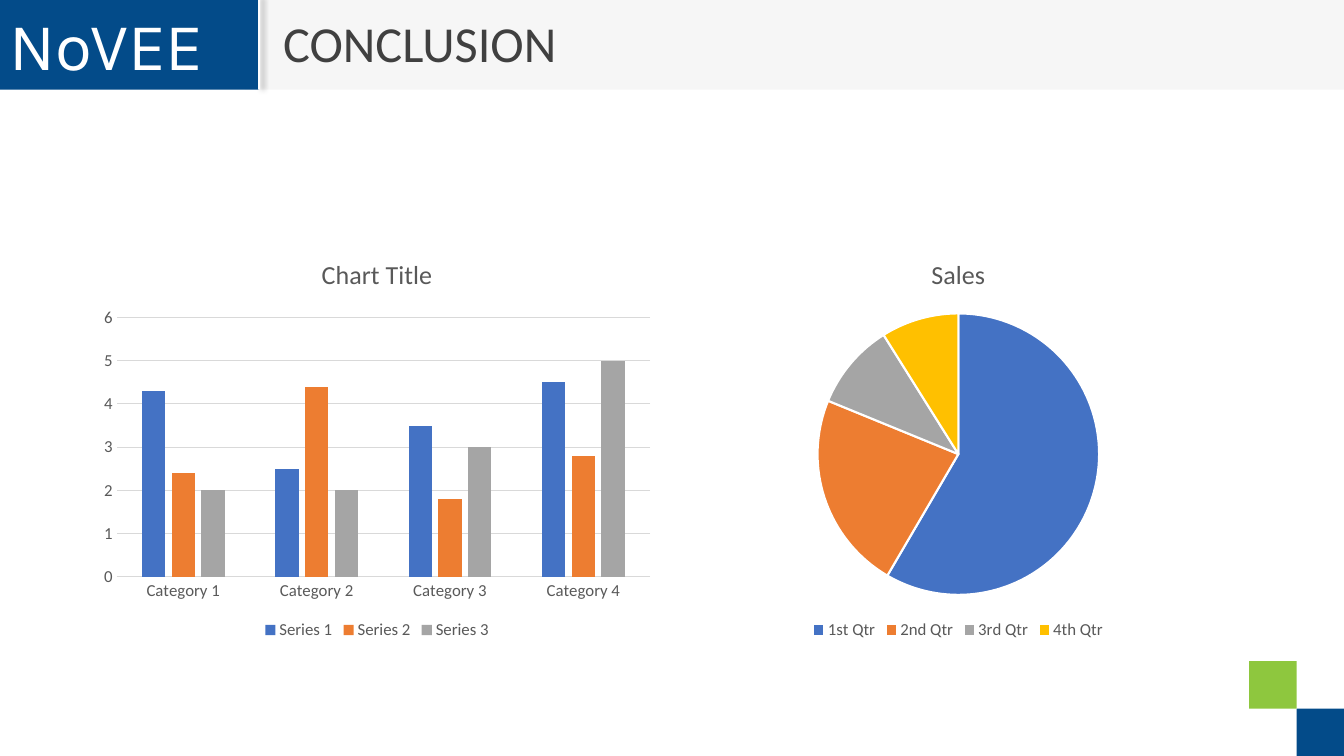
from lxml import etree
from pptx import Presentation
from pptx.chart.data import CategoryChartData
from pptx.dml.color import RGBColor
from pptx.enum.chart import XL_CHART_TYPE, XL_LEGEND_POSITION, XL_TICK_MARK
from pptx.enum.shapes import MSO_SHAPE
from pptx.enum.text import MSO_ANCHOR, PP_ALIGN
from pptx.oxml.ns import qn
from pptx.util import Inches, Pt

COLUMN, PIE = XL_CHART_TYPE.COLUMN_CLUSTERED, XL_CHART_TYPE.PIE
BOTTOM_LEGEND = XL_LEGEND_POSITION.BOTTOM
NO_TICK = XL_TICK_MARK.NONE
RECT = MSO_SHAPE.RECTANGLE
MIDDLE, BOTTOM = MSO_ANCHOR.MIDDLE, MSO_ANCHOR.BOTTOM
LEFT = PP_ALIGN.LEFT

COLORS = {
    "navy": "034B89", "green": "8EC73E", "band": "D5D5D6", "white": "FFFFFF",
    "title": "404040", "label": "595959", "grid": "D9D9D9", "black": "000000",
    "blue": "4472C4", "orange": "ED7D31", "gray": "A5A5A5", "gold": "FFC000",
}
PALETTE = ["blue", "orange", "gray", "gold"]
SLIDE_W, SLIDE_H = 13.33, 7.5
HEADER_H = 0.89
TILE = 0.47


def rgb(name):
    """Return the named colour."""
    return RGBColor.from_string(COLORS[name])


def style_font(font, size, color, name="Calibri"):
    """Set size, colour and typeface of a font."""
    font.size = Pt(size)
    font.name = name
    font.bold = False
    font.color.rgb = rgb(color)


def fill_solid(fill, color):
    """Fill with the named colour."""
    fill.solid()
    fill.fore_color.rgb = rgb(color)


def add_rect(slide, x, y, w, h, color, alpha=None):
    """Add a borderless rectangle, transparent if alpha is given in percent."""
    sp = slide.shapes.add_shape(RECT, Inches(x), Inches(y), Inches(w), Inches(h))
    sp.shadow.inherit = False
    sp.line.fill.background()
    fill_solid(sp.fill, color)
    if alpha is not None:
        clr = sp.fill._xPr.find(".//" + qn("a:srgbClr"))
        etree.SubElement(clr, qn("a:alpha"), val=str(alpha * 1000))
    return sp


def add_shadow(sp, blur, dist, alpha):
    """Cast a black shadow to the right, lengths in points."""
    effects = sp._element.spPr.find(qn("a:effectLst"))
    shadow = etree.SubElement(effects, qn("a:outerShdw"), blurRad=str(Pt(blur)),
                              dist=str(Pt(dist)), dir="0", algn="l", rotWithShape="0")
    clr = etree.SubElement(shadow, qn("a:srgbClr"), val=COLORS["black"])
    etree.SubElement(clr, qn("a:alpha"), val=str(alpha * 1000))


def write_text(sp, text, size, color, font="Calibri", anchor=MIDDLE, spacing=1.0, before=0):
    """Write one left-aligned line into a shape."""
    tf = sp.text_frame
    tf.word_wrap = True
    tf.vertical_anchor = anchor
    p = tf.paragraphs[0]
    p.alignment = LEFT
    p.line_spacing = spacing
    p.space_before = Pt(before)
    r = p.add_run()
    r.text = text
    style_font(r.font, size, color, font)


def add_chart(slide, kind, x, w, title, categories, series):
    """Add a titled chart with a legend below it."""
    data = CategoryChartData()
    data.categories = categories
    for name, values in series:
        data.add_series(name, values)
    chart = slide.shapes.add_chart(
        kind, Inches(x), Inches(2.36), Inches(w), Inches(4.03), data).chart
    style_font(chart.font, 10, "black")
    chart.has_title = True
    p = chart.chart_title.text_frame.paragraphs[0]
    r = p.add_run()
    r.text = title
    style_font(r.font, 18.6, "label")
    chart.chart_title.include_in_layout = False
    chart.has_legend = True
    chart.legend.position = BOTTOM_LEGEND
    chart.legend.include_in_layout = False
    style_font(chart.legend.font, 12, "label")
    return chart


def style_axis(axis):
    """Give an axis plain labels without ticks."""
    axis.major_tick_mark = axis.minor_tick_mark = NO_TICK
    style_font(axis.tick_labels.font, 12, "label")


def style_line(line, color, width):
    """Set colour and width of a line."""
    line.color.rgb = rgb(color)
    line.width = Pt(width)


def add_column_chart(slide):
    """Add the clustered columns."""
    chart = add_chart(
        slide, COLUMN, 0.92, 5.64, "Chart Title",
        [f"Category {i}" for i in range(1, 5)],
        [("Series 1", (4.3, 2.5, 3.5, 4.5)),
         ("Series 2", (2.4, 4.4, 1.8, 2.8)),
         ("Series 3", (2, 2, 3, 5))])
    plot = chart.plots[0]
    plot.gap_width, plot.overlap = 219, -27
    plot.vary_by_categories = False
    for series, color in zip(plot.series, PALETTE):
        fill_solid(series.format.fill, color)
    cat, val = chart.category_axis, chart.value_axis
    style_axis(cat)
    style_axis(val)
    style_line(cat.format.line, "grid", 0.75)
    val.format.line.fill.background()
    val.minimum_scale, val.maximum_scale, val.major_unit = 0, 6, 1
    val.has_major_gridlines = True
    style_line(val.major_gridlines.format.line, "grid", 0.75)


def add_pie_chart(slide):
    """Add the pie of quarterly sales."""
    chart = add_chart(
        slide, PIE, 6.67, 5.67, "Sales",
        ["1st Qtr", "2nd Qtr", "3rd Qtr", "4th Qtr"],
        [("Sales", (59, 23, 10, 9))])
    plot = chart.plots[0]
    plot.vary_by_categories = True
    for i, color in enumerate(PALETTE):
        fmt = plot.series[0].points[i].format
        fill_solid(fmt.fill, color)
        style_line(fmt.line, "white", 1.5)


def add_header(slide):
    """Add the header band, name block, divider and title."""
    add_rect(slide, 2.43, 0, SLIDE_W - 2.43, HEADER_H, "band", alpha=20)
    block = add_rect(slide, 0, -0.02, 2.57, 0.91, "navy")
    write_text(block, "NoVEE", 48, "white", font="Karla")
    divider = add_rect(slide, 2.56, -0.02, 0.02, 0.91, "white")
    add_shadow(divider, blur=4, dist=3, alpha=40)
    title = slide.shapes.add_textbox(Inches(2.71), Inches(0.13), Inches(10.32), Inches(0.64))
    write_text(title, "CONCLUSION", 36, "title", anchor=BOTTOM, spacing=0.8, before=10)


def main():
    """Build and save the slide."""
    prs = Presentation()
    prs.slide_width, prs.slide_height = Inches(SLIDE_W), Inches(SLIDE_H)
    slide = prs.slides.add_slide(prs.slide_layouts[6])
    for step, color in enumerate(["navy", "green"], start=1):
        add_rect(slide, SLIDE_W - step * TILE, SLIDE_H - step * TILE, TILE, TILE, color)
    add_header(slide)
    add_column_chart(slide)
    add_pie_chart(slide)
    prs.save("out.pptx")


if __name__ == "__main__":
    main()
